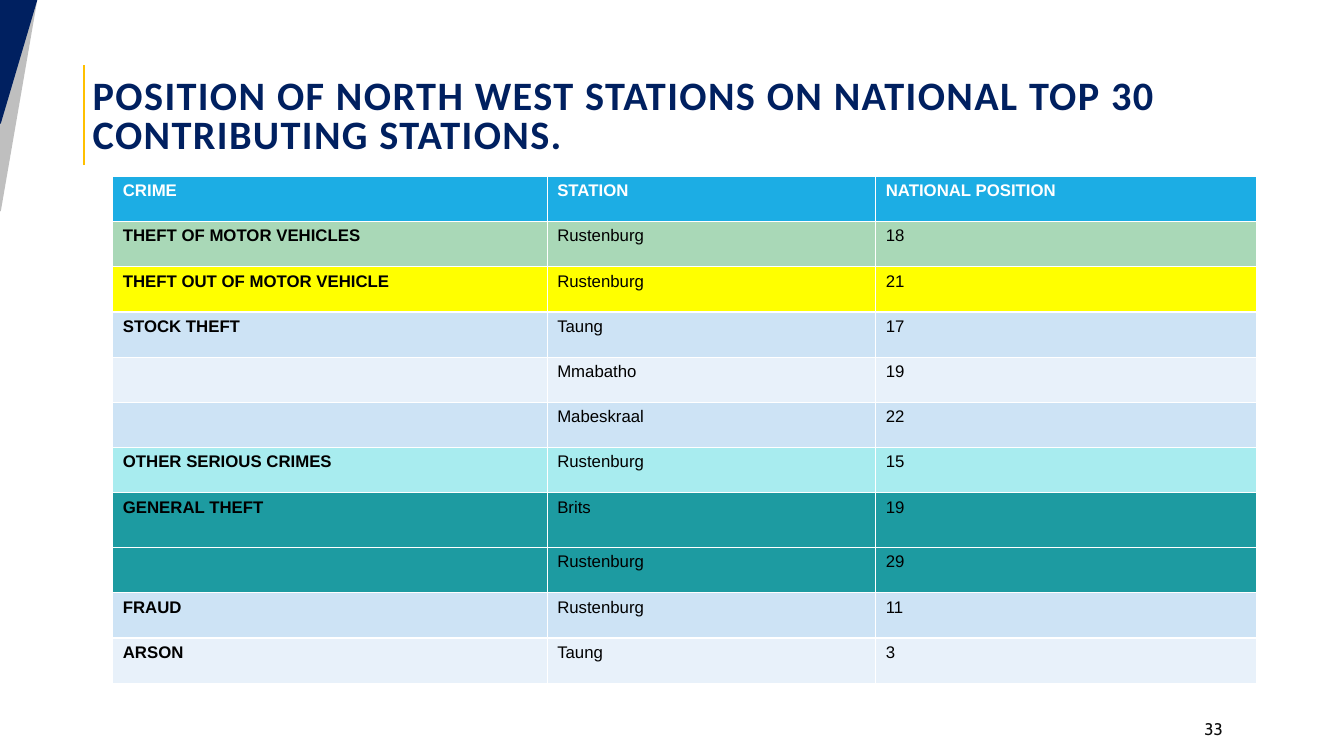
from pptx import Presentation
from pptx.dml.color import RGBColor
from pptx.enum.shapes import MSO_CONNECTOR as CONNECTOR, MSO_SHAPE as SHAPE
from pptx.enum.text import MSO_ANCHOR as ANCHOR, MSO_AUTO_SIZE as AUTO_SIZE, PP_ALIGN as ALIGN
from pptx.util import Pt
from lxml import etree

COLORS = {
    "white": "FFFFFF", "black": "000000", "number": "0D0D0D",
    "navy": "002060", "grey": "BFBFBF", "gold": "FFC000",
    "header": "1CADE4", "green": "A9D8B7", "yellow": "FFFF00",
    "blue": "CDE3F5", "pale": "E8F1FA", "aqua": "A8ECEF", "teal": "1D9BA1",
}


def color(name):
    return RGBColor.from_string(COLORS[name])


def set_font(paragraph, face, size, color_name, bold=False):
    font = paragraph.font
    font.name, font.size, font.bold = face, Pt(size), bold
    font.color.rgb = color(color_name)


deck = Presentation()
deck.slide_width, deck.slide_height = Pt(960), Pt(540)
slide = deck.slides.add_slide(deck.slide_layouts[5])
shapes = slide.shapes

# Gold rule beside the title
title_rule = shapes.add_connector(CONNECTOR.STRAIGHT, Pt(60), Pt(118), Pt(60), Pt(46.3))
title_rule.line.color.rgb = color("gold")
title_rule.line.width = Pt(1.5)
etree.SubElement(
    title_rule._element.spPr,
    "{http://schemas.openxmlformats.org/drawingml/2006/main}effectLst",
)

# Corner wedges
for wedge_color, wedge_height in (("grey", 150.5), ("navy", 88)):
    wedge = shapes.add_shape(SHAPE.RIGHT_TRIANGLE, 0, 0, Pt(26), Pt(wedge_height))
    wedge._element.spPr.xfrm.set("flipV", "1")
    wedge.shadow.inherit = False
    wedge.fill.solid()
    wedge.fill.fore_color.rgb = color(wedge_color)
    wedge.line.color.rgb = color(wedge_color)
    wedge.line.width = Pt(1.25)

# Title
title = shapes.title
title.left, title.top, title.width, title.height = Pt(59), Pt(27.4), Pt(871), Pt(86.4)
title_frame = title.text_frame
title_frame.text = "POSITION OF NORTH WEST STATIONS ON NATIONAL TOP 30 CONTRIBUTING STATIONS."
title_frame.word_wrap = True
title_frame.auto_size = AUTO_SIZE.NONE
title_frame.vertical_anchor = ANCHOR.MIDDLE
title_frame.margin_top = Pt(31.6)
heading = title_frame.paragraphs[0]
heading.alignment = ALIGN.LEFT
heading.line_spacing = 0.8
set_font(heading, "Calibri", 28.8, "navy", bold=True)
heading.runs[0]._r.get_or_add_rPr().set("spc", "100")

# Station positions: fill, crime, station, national position
positions = [
    ("header", "CRIME", "STATION", "NATIONAL POSITION"),
    ("green", "THEFT OF MOTOR VEHICLES", "Rustenburg", "18"),
    ("yellow", "THEFT OUT OF MOTOR VEHICLE", "Rustenburg", "21"),
    ("blue", "STOCK THEFT", "Taung", "17"),
    ("pale", "", "Mmabatho", "19"),
    ("blue", "", "Mabeskraal", "22"),
    ("aqua", "OTHER SERIOUS CRIMES", "Rustenburg", "15"),
    ("teal", "GENERAL THEFT", "Brits", "19"),
    ("teal", "", "Rustenburg", "29"),
    ("blue", "FRAUD", "Rustenburg", "11"),
    ("pale", "ARSON", "Taung", "3"),
]
column_widths = (310.3, 234.7, 272.2)
table = shapes.add_table(
    len(positions), len(column_widths), Pt(80.6), Pt(126), Pt(817.2), Pt(362.2)
).table
table.horz_banding = False
for column, width in zip(table.columns, column_widths):
    column.width = Pt(width)
for row, (fill, *texts) in zip(table.rows, positions):
    is_header = fill == "header"
    row.height = Pt(39.2 if texts[0] == "GENERAL THEFT" else 32.3)
    for index, (cell, text) in enumerate(zip(row.cells, texts)):
        cell.text = text
        cell.fill.solid()
        cell.fill.fore_color.rgb = color(fill)
        set_font(cell.text_frame.paragraphs[0], "Arial", 12,
                 "white" if is_header else "black", bold=is_header or index == 0)

# Page number
page_number = shapes.add_textbox(Pt(853.2), Pt(509.8), Pt(76.3), Pt(21.6)).text_frame
page_number.word_wrap = True
page_number.vertical_anchor = ANCHOR.MIDDLE
page_number.text = "33"
set_font(page_number.paragraphs[0], "Cabin", 12, "number")

deck.save("out.pptx")
